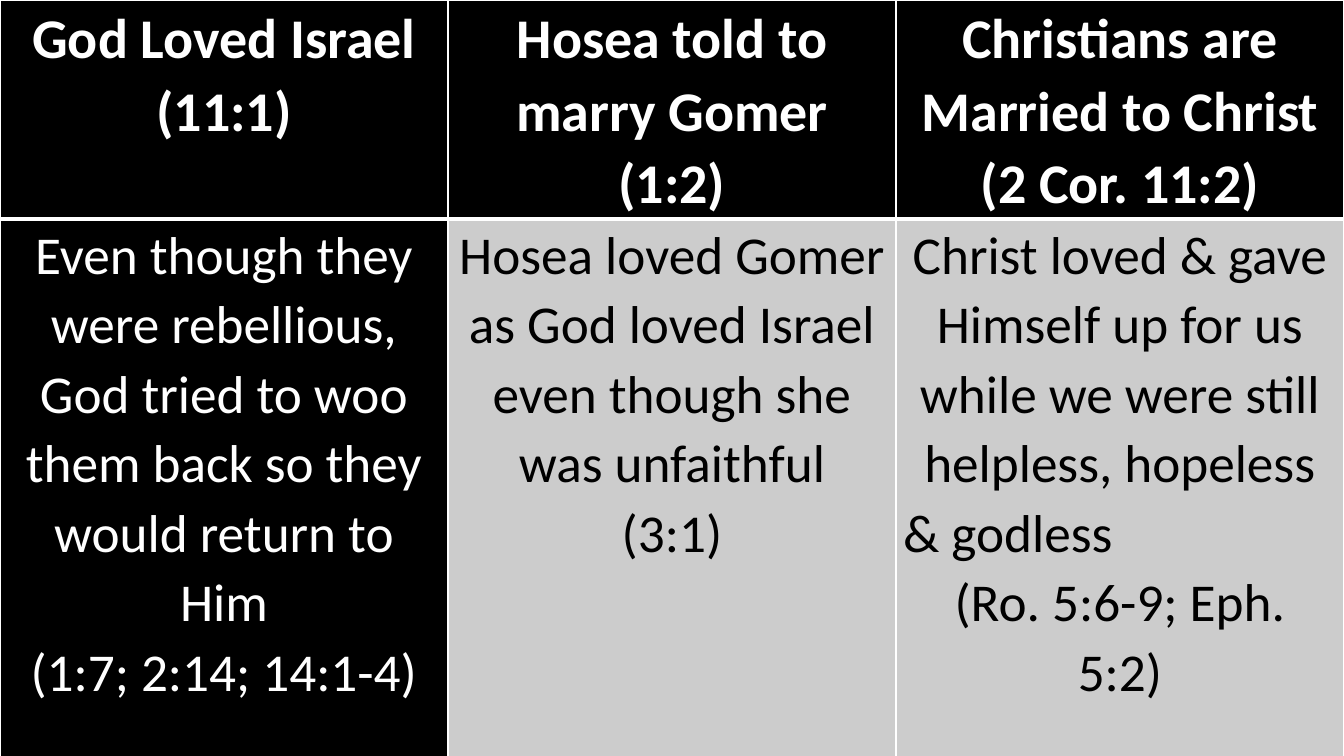
import pptx
import pptx.dml.color
import pptx.enum.text
import pptx.oxml
import pptx.oxml.ns
import pptx.util

ALIGN = pptx.enum.text.PP_ALIGN
BLACK, WHITE, GREY = "000000", "FFFFFF", "CCCCCC"

HEADINGS = [
    ["God Loved Israel (11:1)"],
    ["Hosea told to marry Gomer", "(1:2)"],
    ["Christians are Married to Christ", "(2 Cor. 11:2)"],
]
PARALLELS = [
    ["Even though they were rebellious, God tried to woo them back so they would return to Him",
     "(1:7; 2:14; 14:1-4)"],
    ["Hosea loved Gomer as God loved Israel even though she was unfaithful", "(3:1)"],
    ["Christ loved & gave Himself up for us while we were still helpless, hopeless",
     "& godless", "(Ro. 5:6-9; Eph.\v5:2)"],
]


def color(hex_text):
    return pptx.dml.color.RGBColor.from_string(hex_text)


class SlideBuilder:
    font = "Calibri"
    line_spacing = 1.07
    side_margin = pptx.util.Inches(0.07)

    def __init__(self, deck):
        self.deck = deck
        self.slide = deck.slides.add_slide(deck.slide_layouts[6])

    def background(self, fill):
        self.slide.background.fill.solid()
        self.slide.background.fill.fore_color.rgb = color(fill)

    def table(self, column_count, row_shares):
        """Add a table over the whole slide, its rows given as shares of the height."""
        width, height = self.deck.slide_width, self.deck.slide_height
        table = self.slide.shapes.add_table(
            len(row_shares), column_count, 0, 0, width, height).table
        for column in table.columns:
            column.width = width // column_count
        for row, share in zip(table.rows, row_shares):
            row.height = int(height * share)
        return table

    def borders(self, cell, widths):
        """Draw white cell edges; widths maps edge letters L, R, T, B to points."""
        properties = cell._tc.get_or_add_tcPr()
        namespace = pptx.oxml.ns.nsdecls("a")
        for position, (edge, points) in enumerate(widths.items()):
            line = pptx.oxml.parse_xml(
                f'<a:ln{edge} {namespace} w="{pptx.util.Pt(points)}"><a:solidFill>'
                f'<a:srgbClr val="{WHITE}"/></a:solidFill></a:ln{edge}>')
            properties.insert(position, line)

    def cell(self, cell, lines, size, fill, ink, bold=False):
        cell.margin_left = cell.margin_right = self.side_margin
        cell.margin_top = cell.margin_bottom = 0
        cell.fill.solid()
        cell.fill.fore_color.rgb = color(fill)
        cell.text_frame.text = "\n".join(lines)
        for para in cell.text_frame.paragraphs:
            para.alignment = ALIGN.CENTER
            para.line_spacing = self.line_spacing
            for span in para.runs:
                span.font.name = self.font
                span.font.size = pptx.util.Pt(size)
                span.font.bold = bold
                span.font.color.rgb = color(ink)


def main():
    deck = pptx.Presentation()
    deck.slide_width = pptx.util.Inches(13.33)
    deck.slide_height = pptx.util.Inches(7.5)

    page = SlideBuilder(deck)
    page.background(BLACK)
    header_share = 2.12 / 7.5
    table = page.table(len(HEADINGS), [header_share, 1 - header_share])

    for column, (heading, parallel) in enumerate(zip(HEADINGS, PARALLELS)):
        top, body = table.cell(0, column), table.cell(1, column)
        fill, ink = (BLACK, WHITE) if column == 0 else (GREY, BLACK)
        page.cell(top, heading, 40, BLACK, WHITE, bold=True)
        page.cell(body, parallel, 38, fill, ink)
        page.borders(top, {"L": 1, "R": 1, "T": 1, "B": 3})
        page.borders(body, {"L": 1, "R": 1, "T": 3, "B": 1})

    table.cell(1, 2).text_frame.paragraphs[1].alignment = ALIGN.LEFT
    deck.save("out.pptx")


if __name__ == "__main__":
    main()
